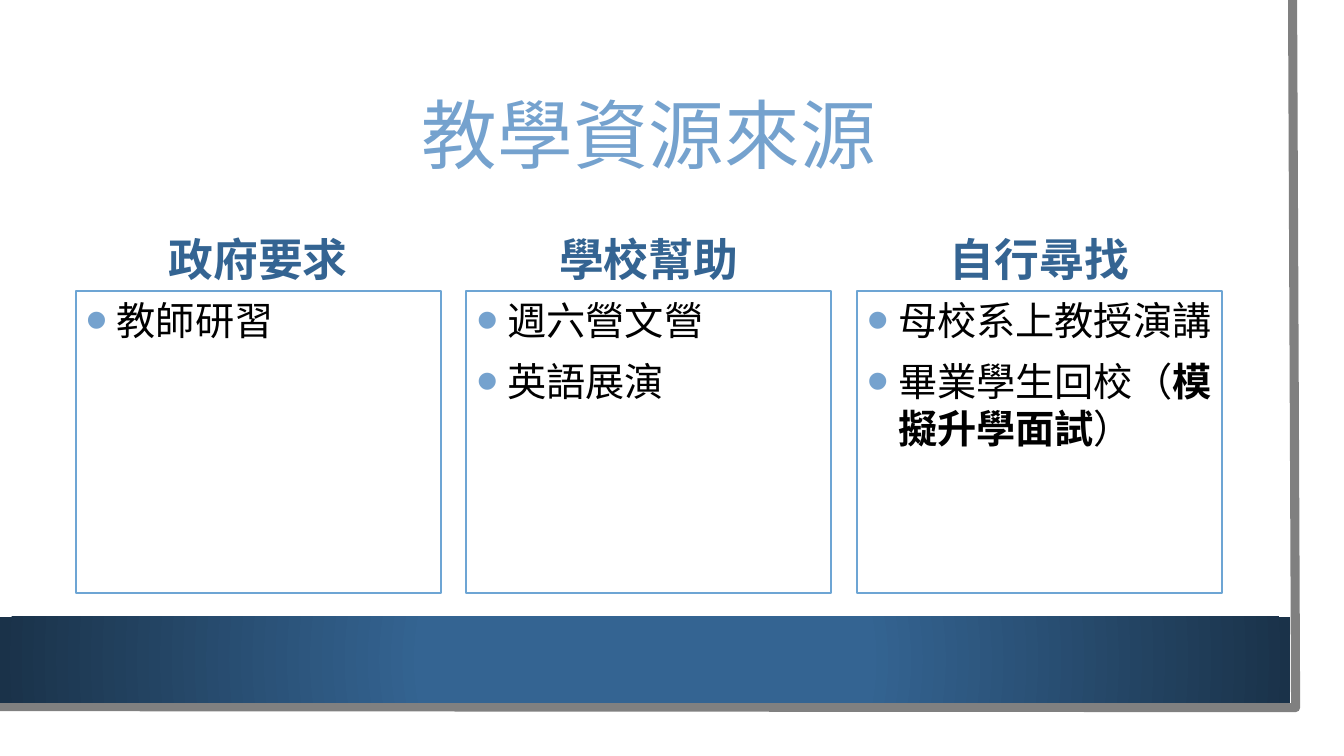
import pptx
import pptx.util
import pptx.dml.color
import pptx.enum.shapes
import pptx.enum.text
import pptx.oxml
import pptx.oxml.ns

THEME = {
    "font": "Arial Narrow", "cjk_font": "Noto Sans CJK SC",
    "white": "FFFFFF", "black": "000000", "edge": "808080",
    "title": "75A2CE", "heading": "346492", "border": "6DA5D4",
    "band_centre": "346492", "band_rim": "1A3249",
    "title_size": 54, "heading_size": 32, "body_size": 28,
}
MARGIN, COLUMN_WIDTH, COLUMN_PITCH = 0.75, 3.62, 3.875
HEADING_TOP, HEADING_HEIGHT, LIST_HEIGHT = 2.26, 0.63, 2.99
INDENT = 0.31
COLUMNS = [
    ("政府要求", [["教師研習"]]),
    ("學校幫助", [["週六營文營"], ["英語展演"]]),
    ("自行尋找", [["母校系上教授演講"], ["畢業學生回校（", "模擬升學面試", "）"]]),
]
Inches = pptx.util.Inches
Pt = pptx.util.Pt
colour = pptx.dml.color.RGBColor.from_string
namespace = pptx.oxml.ns.nsdecls("a")


def style_run(run, size, color, bold=False, font=THEME["font"]):
    run.font.size = Pt(size)
    run.font.name = font
    run.font.bold = bold
    run.font.color.rgb = colour(color)
    run.font._element.find(pptx.oxml.ns.qn("a:latin")).addnext(
        pptx.oxml.parse_xml(f'<a:ea {namespace} typeface="{THEME["cjk_font"]}"/>'))


def add_box(left, top, width, height, fill, line=None):
    shape = slide.shapes.add_shape(
        pptx.enum.shapes.MSO_SHAPE.RECTANGLE,
        Inches(left), Inches(top), Inches(width), Inches(height))
    shape.shadow.inherit = False
    shape.fill.solid()
    shape.fill.fore_color.rgb = colour(fill)
    if line:
        shape.line.color.rgb = colour(line)
        shape.line.width = Pt(1.5)
    else:
        shape.line.fill.background()
    return shape


presentation = pptx.Presentation()
presentation.slide_width = Inches(13.33)
presentation.slide_height = Inches(7.5)
slide = presentation.slides.add_slide(presentation.slide_layouts[6])

add_box(0, 0, 13.1, 7.27, THEME["white"])

builder = slide.shapes.build_freeform(Inches(12.82), 0)
builder.add_line_segments(
    [(Inches(12.85), Inches(7.02)), (Inches(-0.03), Inches(7.01))], close=False)
page_edge = builder.convert_to_shape()
page_edge.shadow.inherit = False
page_edge.fill.background()
page_edge.line.color.rgb = colour(THEME["edge"])
page_edge.line.width = Pt(6.5)

band = add_box(0, 6.12, 12.8, 0.85, THEME["band_centre"])
solid_fill = band._element.spPr.find(pptx.oxml.ns.qn("a:solidFill"))
solid_fill.addnext(pptx.oxml.parse_xml(
    f'<a:gradFill {namespace} rotWithShape="1"><a:gsLst>'
    f'<a:gs pos="34000"><a:srgbClr val="{THEME["band_centre"]}"/></a:gs>'
    f'<a:gs pos="100000"><a:srgbClr val="{THEME["band_rim"]}"/></a:gs></a:gsLst>'
    '<a:path path="circle"><a:fillToRect l="50000" t="50000" r="50000" b="50000"/></a:path>'
    '</a:gradFill>'))
band._element.spPr.remove(solid_fill)

labels = [("教學資源來源", MARGIN, 0.75, 11.37, 1.26, THEME["title_size"],
           THEME["title"], False, THEME["cjk_font"], pptx.enum.text.MSO_ANCHOR.MIDDLE)]
for column, (heading, items) in enumerate(COLUMNS):
    labels.append((heading, MARGIN + column * COLUMN_PITCH, HEADING_TOP, COLUMN_WIDTH,
                   HEADING_HEIGHT, THEME["heading_size"], THEME["heading"], True,
                   THEME["font"], pptx.enum.text.MSO_ANCHOR.BOTTOM))

for text, left, top, width, height, size, color, bold, font, anchor in labels:
    label = slide.shapes.add_textbox(Inches(left), Inches(top), Inches(width), Inches(height))
    label.text_frame.word_wrap = True
    label.text_frame.vertical_anchor = anchor
    label.text_frame.text = text
    paragraph = label.text_frame.paragraphs[0]
    paragraph.alignment = pptx.enum.text.PP_ALIGN.CENTER
    paragraph.line_spacing = 0.9
    style_run(paragraph.runs[0], size, color, bold, font)

for column, (heading, items) in enumerate(COLUMNS):
    box = add_box(MARGIN + column * COLUMN_PITCH, HEADING_TOP + HEADING_HEIGHT,
                  COLUMN_WIDTH, LIST_HEIGHT, THEME["white"], THEME["border"])
    frame = box.text_frame
    frame.word_wrap = True
    frame.vertical_anchor = pptx.enum.text.MSO_ANCHOR.TOP
    frame.margin_right = Inches(0.05)
    for row, pieces in enumerate(items):
        paragraph = frame.add_paragraph() if row else frame.paragraphs[0]
        paragraph.alignment = pptx.enum.text.PP_ALIGN.LEFT
        paragraph.line_spacing = 1.0
        paragraph.space_before = Pt(10 if row else 0)
        properties = paragraph._p.get_or_add_pPr()
        properties.set("marL", str(Inches(INDENT)))
        properties.set("indent", str(-Inches(INDENT)))
        for bullet in (f'<a:buClr {namespace}><a:srgbClr val="{THEME["title"]}"/></a:buClr>',
                       f'<a:buSzPct {namespace} val="160000"/>',
                       f'<a:buFont {namespace} typeface="Arial"/>',
                       f'<a:buChar {namespace} char="•"/>'):
            properties.append(pptx.oxml.parse_xml(bullet))
        for position, piece in enumerate(pieces):
            run = paragraph.add_run()
            run.text = piece
            style_run(run, THEME["body_size"], THEME["black"], position == 1)

presentation.save("out.pptx")
